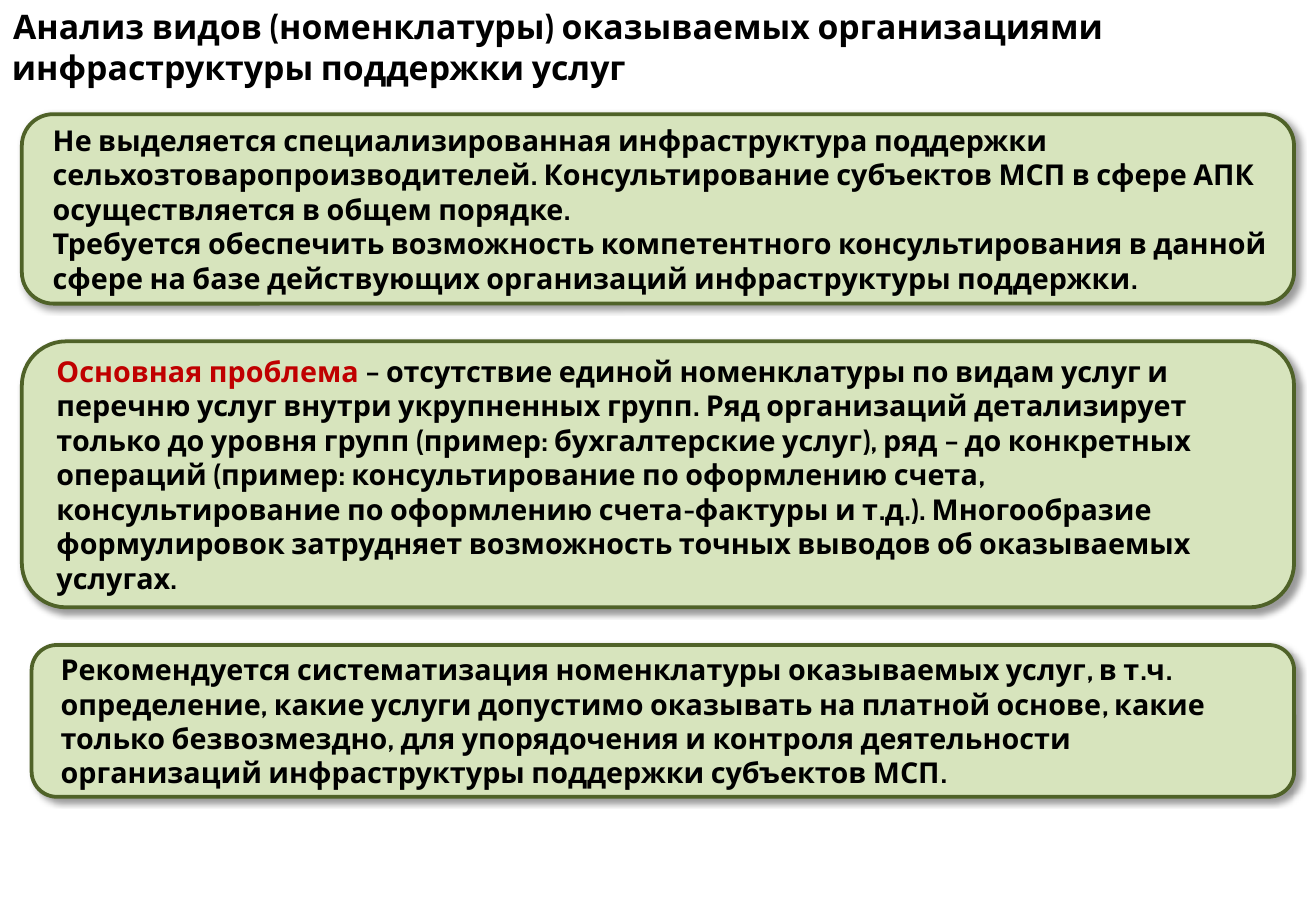
from pptx import Presentation
from pptx.dml.color import RGBColor as RGB
from pptx.enum.shapes import MSO_SHAPE as Shape
from pptx.enum.text import MSO_ANCHOR as Anchor, PP_ALIGN as Align
from pptx.oxml import parse_xml
from pptx.oxml.ns import nsdecls
from pptx.util import Inches, Pt

BLACK, RED, GREEN, OLIVE = "000000", "C00000", "D7E4BD", "4F6228"
SHADOW = (
    f'<a:effectLst {nsdecls("a")}>'
    f'<a:outerShdw blurRad="{Pt(4)}" dist="{Pt(3)}" dir="2700000" algn="tl" rotWithShape="0">'
    f'<a:srgbClr val="{BLACK}"><a:alpha val="40000"/></a:srgbClr>'
    '</a:outerShdw></a:effectLst>'
)


def color(code):
    return RGB.from_string(code)


def write(frame, paras, size=17, left=0.08, indent=0, anchor=Anchor.MIDDLE):
    frame.word_wrap = True
    frame.vertical_anchor = anchor
    for i, runs in enumerate(paras):
        para = frame.add_paragraph() if i else frame.paragraphs[0]
        para.alignment = Align.LEFT
        props = para._p.get_or_add_pPr()
        props.set("marL", str(Inches(left)))
        props.set("indent", str(Inches(indent)))
        for text, code in runs:
            run = para.add_run()
            run.text = text
            run.font.name = "Cabin"
            run.font.size = Pt(size)
            run.font.bold = True
            run.font.color.rgb = color(code)


deck = Presentation()
deck.slide_width, deck.slide_height = Inches(10.83), Inches(7.5)
slide = deck.slides.add_slide(deck.slide_layouts[6])

title = slide.shapes.add_textbox(0, 0, Inches(10.83), Inches(0.52))
write(
    title.text_frame,
    [[("Анализ видов (номенклатуры) оказываемых организациями инфраструктуры поддержки услуг", BLACK)]],
    size=20, left=0, indent=0.01, anchor=Anchor.TOP,
)

right = 10.65
panels = [
    (0.18, 0.94, 1.56, [
        [("Не выделяется специализированная инфраструктура поддержки "
          "сельхозтоваропроизводителей. Консультирование субъектов МСП в сфере АПК "
          "осуществляется в общем порядке.", BLACK)],
        [("Требуется обеспечить возможность компетентного консультирования в данной "
          "сфере на базе действующих организаций инфраструктуры поддержки.", BLACK)],
    ]),
    (0.18, 2.81, 2.19, [
        [("Основная проблема ", RED),
         ("– отсутствие единой номенклатуры по видам услуг и перечню услуг внутри "
          "укрупненных групп. Ряд организаций детализирует только до уровня групп "
          "(пример: бухгалтерские услуг), ряд – до конкретных операций (пример: "
          "консультирование по оформлению счета, консультирование по оформлению "
          "счета-фактуры и т.д.). Многообразие формулировок затрудняет возможность "
          "точных выводов об оказываемых услугах.", BLACK)],
    ]),
    (0.26, 5.31, 1.25, [
        [("Рекомендуется систематизация номенклатуры оказываемых услуг, в т.ч. "
          "определение, какие услуги допустимо оказывать на платной основе, какие "
          "только безвозмездно, для упорядочения и контроля деятельности организаций "
          "инфраструктуры поддержки субъектов МСП.", BLACK)],
    ]),
]
for left, top, height, paras in panels:
    panel = slide.shapes.add_shape(
        Shape.ROUNDED_RECTANGLE, Inches(left), Inches(top), Inches(right - left), Inches(height))
    panel.fill.solid()
    panel.fill.fore_color.rgb = color(GREEN)
    panel.line.color.rgb = color(OLIVE)
    panel.line.width = Pt(2.25)
    panel._element.spPr.append(parse_xml(SHADOW))
    write(panel.text_frame, paras)

deck.save("out.pptx")
